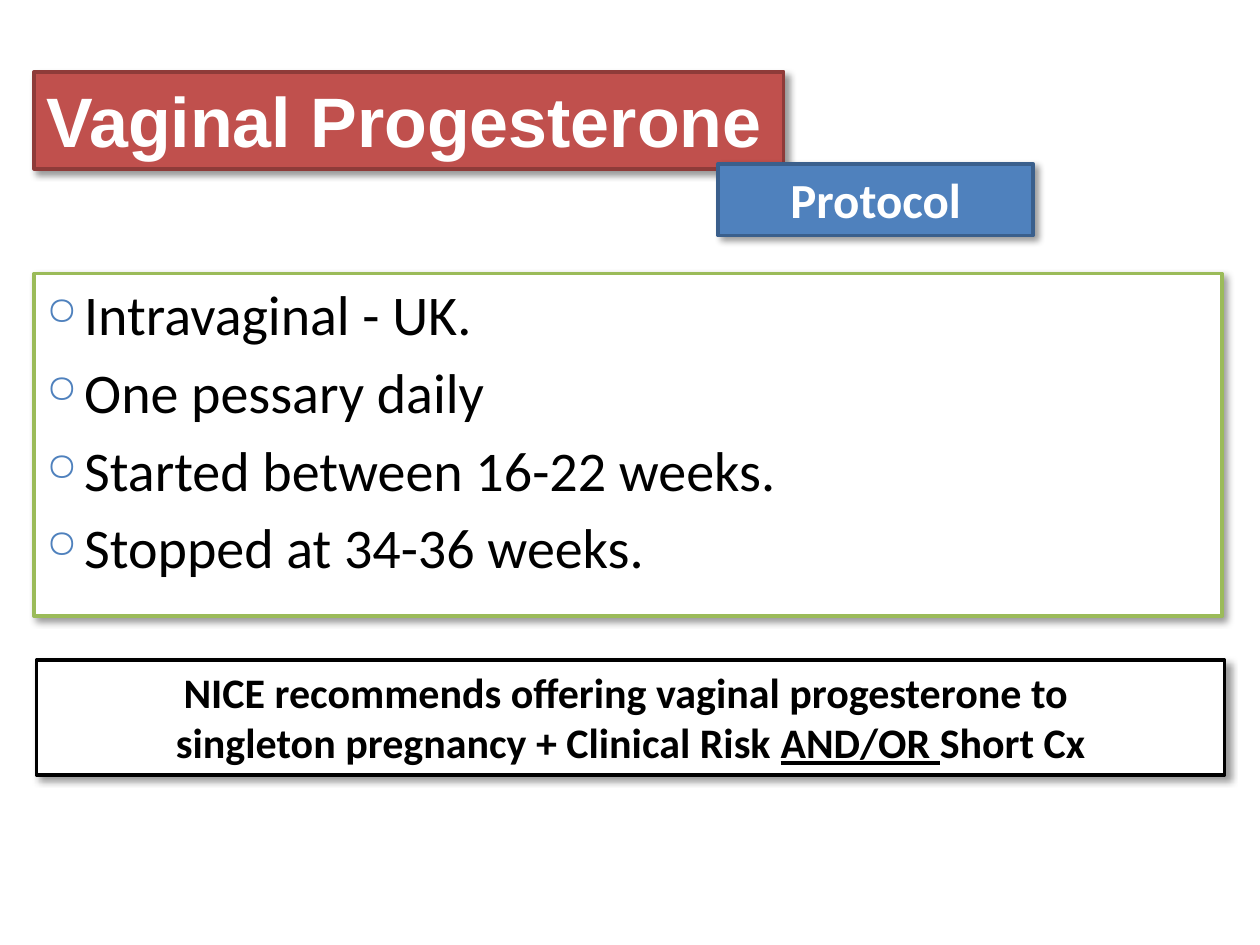
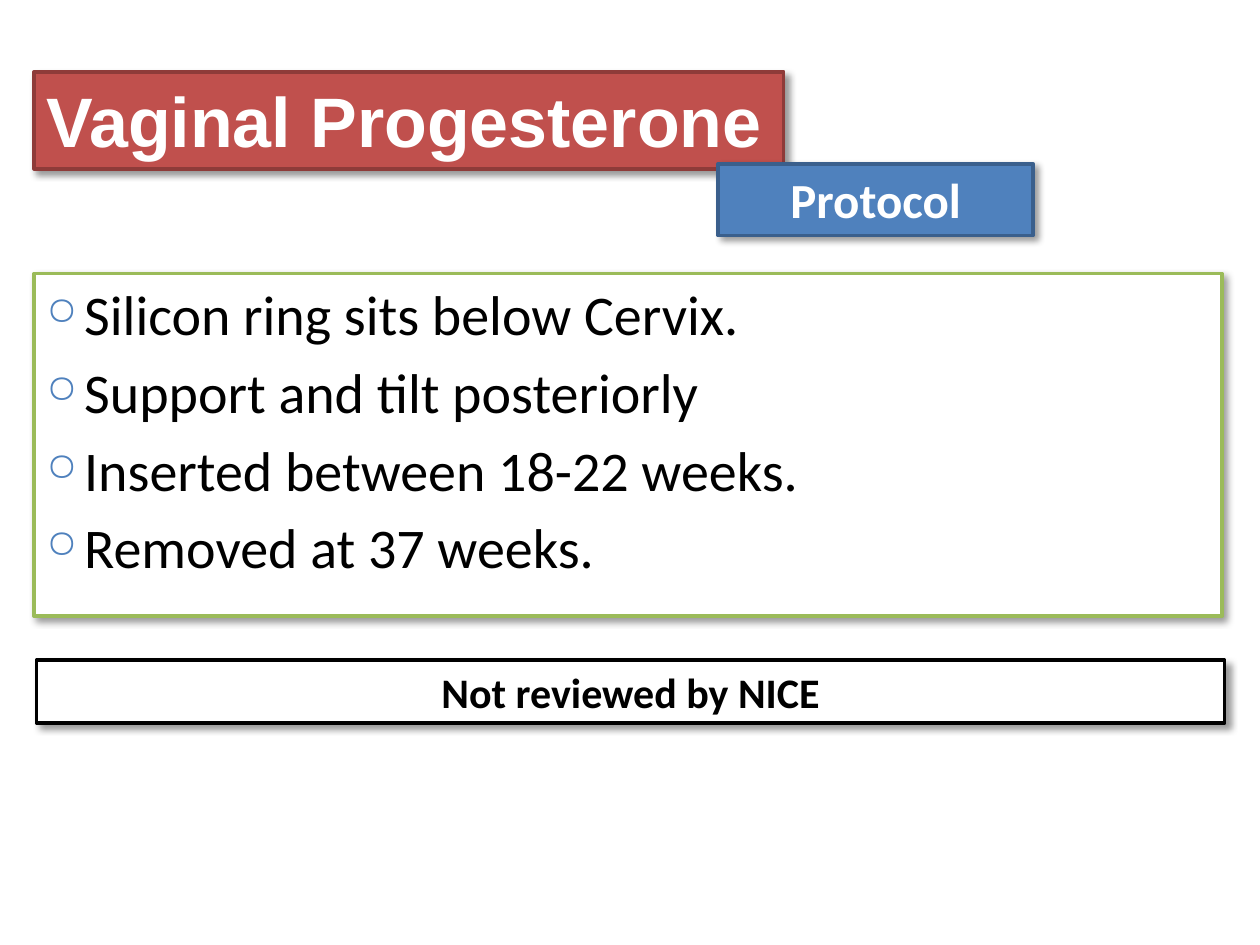
from lxml import etree
from pptx import Presentation
from pptx.dml.color import RGBColor
from pptx.enum.shapes import MSO_SHAPE
from pptx.enum.text import MSO_ANCHOR, MSO_AUTO_SIZE, PP_ALIGN
from pptx.oxml.ns import qn
from pptx.util import Inches, Pt

WHITE, BLACK = "FFFFFF", "000000"
RED, DARK_RED = "C0504D", "8E3B39"
BLUE, DARK_BLUE = "4F81BD", "3A5F8C"
GREEN = "9BBB59"

PROTOCOLS = [
    (
        ["Intravaginal - UK.", "One pessary daily",
         "Started between 16-22 weeks.", "Stopped at 34-36 weeks."],
        [["NICE recommends offering vaginal progesterone to "],
         ["singleton pregnancy + Clinical Risk ", ("AND/OR ", True), "Short Cx"]],
        0.91,
    ),
    (
        ["Silicon ring sits below Cervix.", "Support and tilt posteriorly",
         "Inserted between 18-22 weeks.", "Removed at 37 weeks."],
        [["Not reviewed by NICE"]],
        0.5,
    ),
]


def rgb(color):
    return RGBColor.from_string(color)


def add_node(parent, tag, **attributes):
    node = etree.SubElement(parent, qn(tag))
    for key, value in attributes.items():
        node.set(key, str(value))
    return node


def add_shadow(panel):
    panel.shadow.inherit = False
    effects = panel.element.spPr.find(qn("a:effectLst"))
    shadow = add_node(effects, "a:outerShdw", blurRad=Pt(4), dist=Pt(3),
                      dir=45 * 60000, algn="tl", rotWithShape=0)
    add_node(add_node(shadow, "a:srgbClr", val=BLACK), "a:alpha", val=40000)


def add_panel(slide, left, top, width, height, fill, outline):
    panel = slide.shapes.add_shape(MSO_SHAPE.RECTANGLE, Inches(left), Inches(top),
                                   Inches(width), Inches(height))
    panel.fill.solid()
    panel.fill.fore_color.rgb = rgb(fill)
    panel.line.color.rgb = rgb(outline)
    panel.line.width = Pt(2)
    add_shadow(panel)
    return panel


def add_bullet(paragraph):
    properties = paragraph._p.get_or_add_pPr()
    properties.set("marL", str(Inches(0.3)))
    properties.set("indent", str(Inches(-0.3)))
    add_node(add_node(properties, "a:buClr"), "a:srgbClr", val=BLUE)
    add_node(properties, "a:buSzPct", val=70000)
    add_node(properties, "a:buChar", char="○")


def write_text(panel, lines, size, color, font="Calibri", bold=False,
               align=PP_ALIGN.LEFT, bulleted=False, gap=0, grow=True):
    """Fill a panel; each line is a list of strings or (string, underlined) pairs."""
    frame = panel.text_frame
    frame.word_wrap = True
    frame.vertical_anchor = MSO_ANCHOR.TOP
    frame.auto_size = MSO_AUTO_SIZE.SHAPE_TO_FIT_TEXT if grow else MSO_AUTO_SIZE.NONE
    for index, line in enumerate(lines):
        paragraph = frame.add_paragraph() if index else frame.paragraphs[0]
        paragraph.alignment = align
        if index and gap:
            paragraph.space_before = Pt(gap)
        if bulleted:
            add_bullet(paragraph)
        for part in line:
            words, underlined = (part, False) if isinstance(part, str) else part
            run = paragraph.add_run()
            run.text = words
            run.font.size = Pt(size)
            run.font.name = font
            run.font.bold = bold
            run.font.underline = underlined
            run.font.color.rgb = rgb(color)


def add_heading(slide):
    title = add_panel(slide, 0.27, 0.57, 5.95, 0.77, RED, DARK_RED)
    write_text(title, [["Vaginal Progesterone"]], 40, WHITE, font="Arial", bold=True)
    subtitle = add_panel(slide, 5.7, 1.3, 2.5, 0.57, BLUE, DARK_BLUE)
    write_text(subtitle, [["Protocol"]], 28, WHITE, bold=True, align=PP_ALIGN.CENTER)


def add_steps(slide, steps):
    panel = add_panel(slide, 0.27, 2.17, 9.43, 2.72, WHITE, GREEN)
    write_text(panel, [[step] for step in steps], 32, BLACK,
               bulleted=True, gap=6, grow=False)


def add_guidance(slide, lines, height):
    panel = add_panel(slide, 0.29, 5.24, 9.43, height, WHITE, BLACK)
    write_text(panel, lines, 24, BLACK, bold=True, align=PP_ALIGN.CENTER)


def main():
    deck = Presentation()
    deck.slide_width, deck.slide_height = Inches(10), Inches(7.5)
    for steps, guidance, guidance_height in PROTOCOLS:
        slide = deck.slides.add_slide(deck.slide_layouts[6])
        add_steps(slide, steps)
        add_heading(slide)
        add_guidance(slide, guidance, guidance_height)
    deck.save("out.pptx")


if __name__ == "__main__":
    main()
